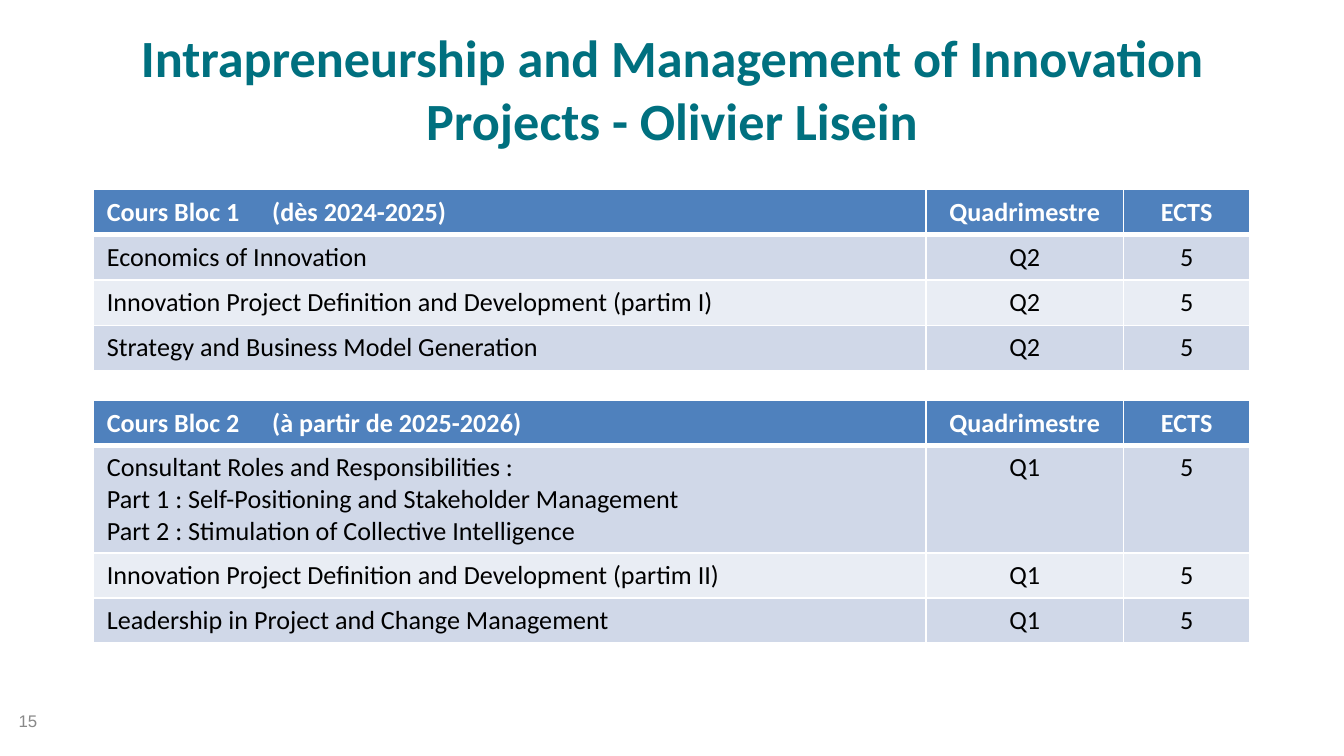
"""Builds the course overview slide of the innovation management programme."""
from dataclasses import dataclass

from lxml import etree
from pptx import Presentation
from pptx.dml.color import RGBColor
from pptx.enum.text import MSO_ANCHOR, PP_ALIGN
from pptx.oxml.ns import qn
from pptx.util import Inches, Pt

LEFT, CENTER = PP_ALIGN.LEFT, PP_ALIGN.CENTER
TOP, MIDDLE = MSO_ANCHOR.TOP, MSO_ANCHOR.MIDDLE


@dataclass(frozen=True)
class Theme:
    """Colours, fonts, type sizes and line widths of the slide."""
    heading: str = "00707F"
    header: str = "4F81BD"
    bands: tuple = ("D0D8E8", "E9EDF4")
    white: str = "FFFFFF"
    black: str = "000000"
    grey: str = "898989"
    font: str = "Calibri"
    number_font: str = "Arial"
    title_size: int = 28
    table_size: int = 14
    number_size: int = 9
    thin: int = 1
    thick: int = 3


class CourseSlide:
    """Holds the theme and the current slide, placing elements by percent of its size."""

    def __init__(self, deck, theme):
        """Add a blank page to the deck."""
        self.theme = theme
        self.column, self.row = deck.slide_width / 100, deck.slide_height / 100
        self.page = deck.slides.add_slide(deck.slide_layouts[6])

    def place(self, left, top, width, height):
        """Turn percentages of the slide into lengths."""
        return (int(left * self.column), int(top * self.row),
                int(width * self.column), int(height * self.row))

    def style(self, frame, size, color, font, bold=False, align=LEFT):
        """Give every paragraph of a frame the same look."""
        for para in frame.paragraphs:
            para.alignment = align
            para.font.size, para.font.bold, para.font.name = Pt(size), bold, font
            para.font.color.rgb = RGBColor.from_string(color)

    def text(self, words, area, anchor, **look):
        """Add a wrapped text box."""
        frame = self.page.shapes.add_textbox(*self.place(*area)).text_frame
        frame.word_wrap = True
        frame.vertical_anchor = anchor
        frame.text = words
        self.style(frame, **look)

    def borders(self, cell, top, bottom):
        """Draw white lines around a cell."""
        properties = cell._tc.get_or_add_tcPr()
        widths = {"a:lnL": self.theme.thin, "a:lnR": self.theme.thin,
                  "a:lnT": top, "a:lnB": bottom}
        for tag, width in widths.items():
            line = etree.SubElement(properties, qn(tag), w=str(Pt(width)))
            fill = etree.SubElement(line, qn("a:solidFill"))
            etree.SubElement(fill, qn("a:srgbClr"), val=self.theme.white)

    def tab_stop(self, para, position):
        """Set a left tab stop on a paragraph."""
        stops = etree.SubElement(para._p.get_or_add_pPr(), qn("a:tabLst"))
        etree.SubElement(stops, qn("a:tab"), pos=str(Inches(position)), algn="l")

    def cell(self, cell, words, row, column):
        """Fill and style one table cell according to its place."""
        theme = self.theme
        is_header = row == 0
        cell.text = words
        if "\t" in words:
            self.tab_stop(cell.text_frame.paragraphs[0], 1.23)
        self.borders(cell, theme.thick if row == 1 else theme.thin,
                     theme.thick if is_header else theme.thin)
        cell.fill.solid()
        cell.fill.fore_color.rgb = RGBColor.from_string(
            theme.header if is_header else theme.bands[(row - 1) % 2])
        self.style(cell.text_frame, theme.table_size,
                   theme.white if is_header else theme.black, theme.font,
                   bold=is_header, align=CENTER if column else LEFT)

    def course_table(self, top, block, term, courses):
        """Add the table of one block, with rows as tall as their lines."""
        rows = [(block, "Quadrimestre", "ECTS")]
        rows += [(course, term, "5") for course in courses]
        widths = (61.95, 14.7, 9.4)
        heights = [0.1 + 0.23 * (row[0].count("\n") + 1) for row in rows]
        area = self.place(6.95, top, sum(widths), 0)
        table = self.page.shapes.add_table(
            len(rows), len(widths), *area[:3], Inches(sum(heights))).table
        for column, width in zip(table.columns, widths):
            column.width = int(width * self.column)
        for row, (height, values) in enumerate(zip(heights, rows)):
            table.rows[row].height = Inches(height)
            for column, words in enumerate(values):
                self.cell(table.cell(row, column), words, row, column)


def main():
    """Build and save the deck."""
    deck = Presentation()
    deck.slide_width = Inches(10)
    deck.slide_height = deck.slide_width * 9 // 16
    theme = Theme()
    slide = CourseSlide(deck, theme)
    slide.course_table(25.07, "Cours Bloc 1\t(dès 2024-2025)", "Q2", (
        "Economics of Innovation",
        "Innovation Project Definition and Development (partim I)",
        "Strategy and Business Model Generation"))
    slide.text("Intrapreneurship and Management of Innovation Projects - Olivier Lisein",
               (5, 2.45, 90, 11), TOP, size=theme.title_size,
               color=theme.heading, font=theme.font, bold=True, align=CENTER)
    slide.course_table(52.98, "Cours Bloc 2\t(à partir de 2025-2026)", "Q1", (
        "Consultant Roles and Responsibilities :\n"
        "Part 1 : Self-Positioning and Stakeholder Management\n"
        "Part 2 : Stimulation of Collective Intelligence",
        "Innovation Project Definition and Development (partim II)",
        "Leadership in Project and Change Management"))
    slide.text("15", (0.4, 92.7, 23.3, 5.3), MIDDLE, size=theme.number_size,
               color=theme.grey, font=theme.number_font)
    deck.save("out.pptx")


if __name__ == "__main__":
    main()
